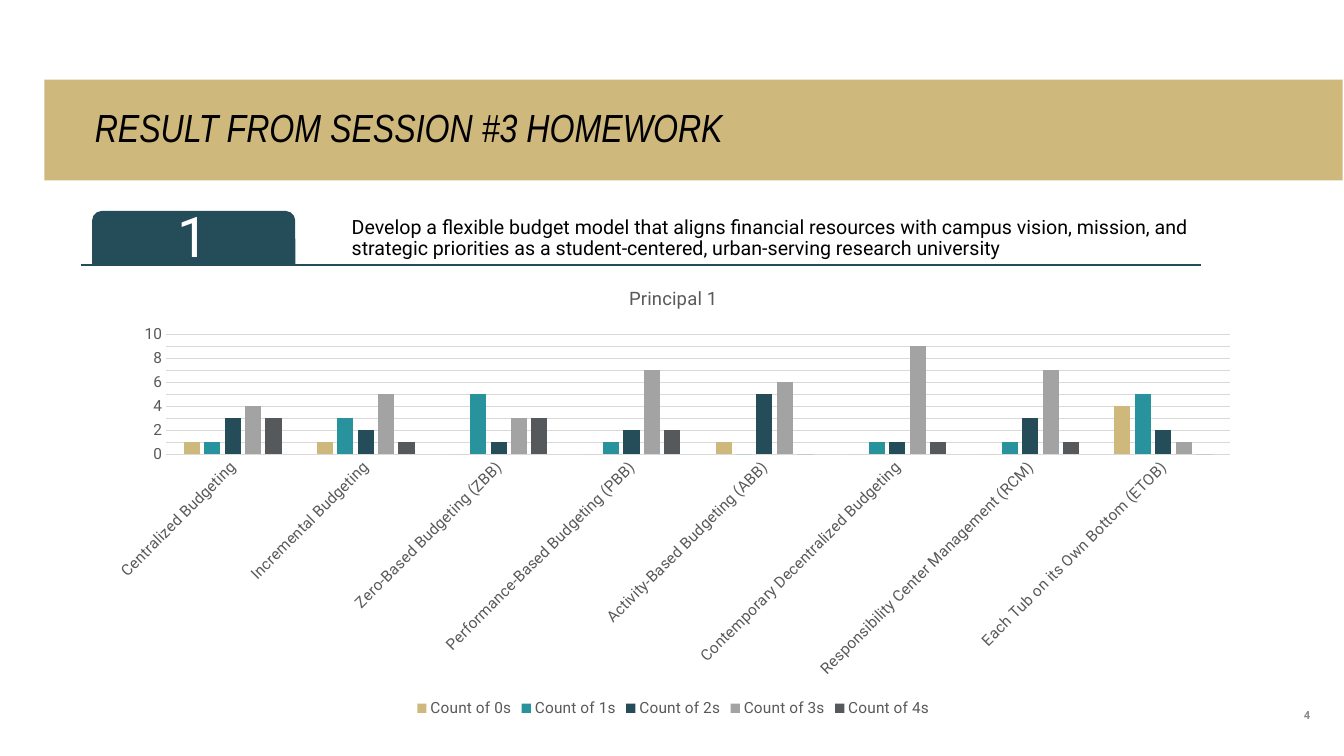
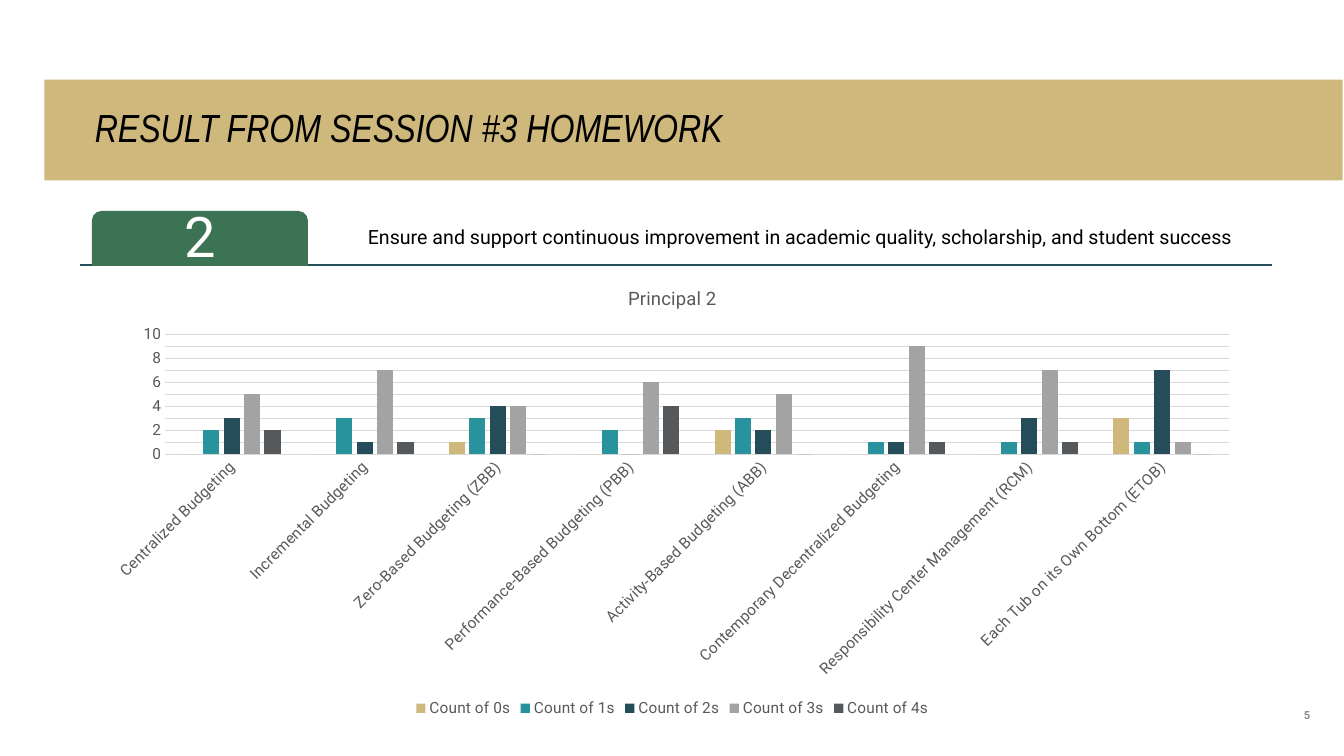
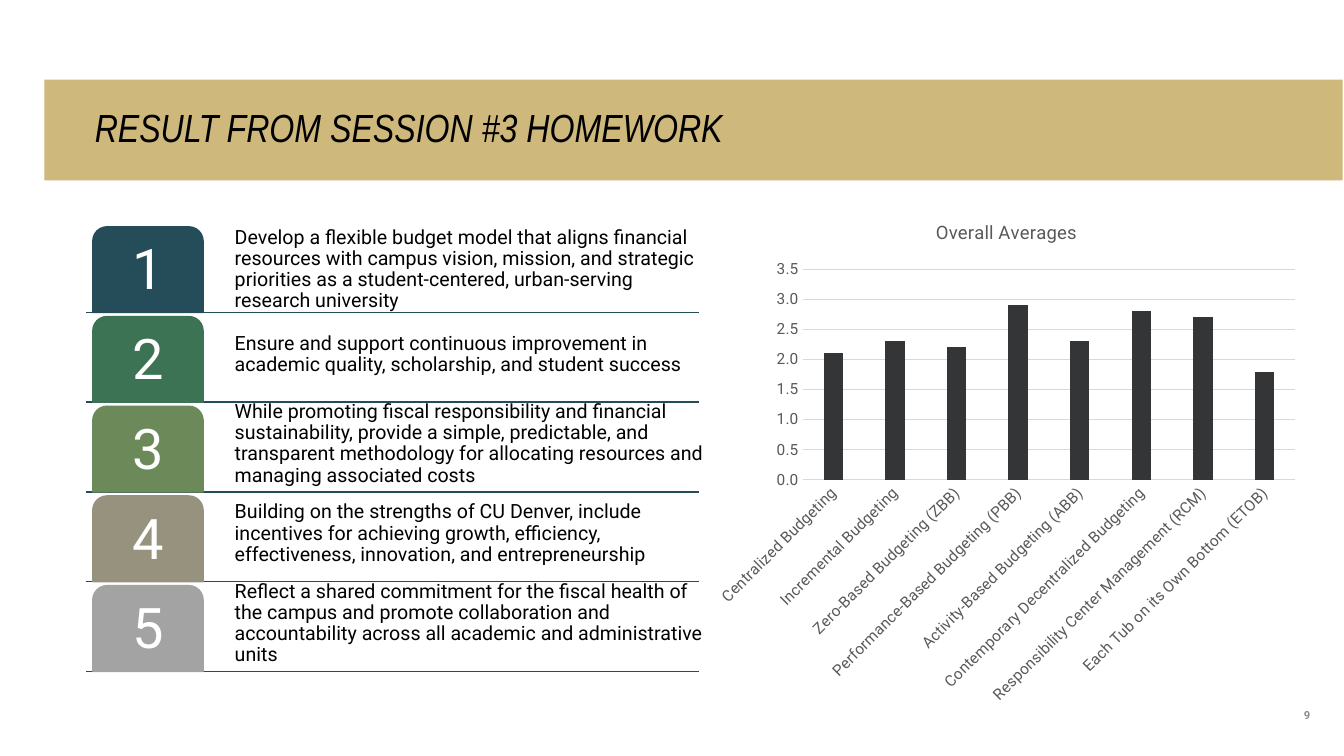
from lxml import etree
from pptx import Presentation
from pptx.chart.data import CategoryChartData
from pptx.dml.color import RGBColor
from pptx.enum.chart import XL_CHART_TYPE as ChartType, XL_LEGEND_POSITION as LegendPosition
from pptx.enum.chart import XL_TICK_MARK as TickMark
from pptx.enum.shapes import MSO_CONNECTOR as Connector, MSO_SHAPE as Shape
from pptx.enum.text import MSO_ANCHOR as Anchor, PP_ALIGN as Align
from pptx.oxml.ns import qn
from pptx.util import Pt

PX = 9144  # EMU per px, 100 px to the inch
HEADING_FONT, BODY_FONT = "Arial Narrow", "Roboto"
COLORS = {
    "gold": "CFB87C", "teal": "28939D", "navy": "244C59", "green": "3C7354",
    "olive": "6B8959", "stone": "96927D", "silver": "A3A3A3", "slate": "56595C",
    "charcoal": "343537", "black": "000000", "white": "FFFFFF",
    "chart_text": "595959", "grid": "D9D9D9", "page_number": "8C8C8C",
}

# Content
HEADING = "RESULT FROM SESSION #3 HOMEWORK"
PRINCIPLES = [
    ("navy", "Develop a flexible budget model that aligns financial resources with campus vision, "
             "mission, and strategic priorities as a student-centered, urban-serving research university"),
    ("green", "Ensure and support continuous improvement in academic quality, scholarship, "
              "and student success"),
    ("olive", "While promoting fiscal responsibility and financial sustainability, provide a simple, "
              "predictable, and transparent methodology for allocating resources and managing "
              "associated costs"),
    ("stone", "Building on the strengths of CU Denver, include incentives for achieving growth, "
              "efficiency, effectiveness, innovation, and entrepreneurship"),
    ("silver", "Reflect a shared commitment for the fiscal health of the campus and promote "
               "collaboration and accountability across all academic and administrative units"),
]
BUDGET_MODELS = [
    "Centralized Budgeting", "Incremental Budgeting", "Zero-Based Budgeting (ZBB)",
    "Performance-Based Budgeting (PBB)", "Activity-Based Budgeting (ABB)",
    "Contemporary Decentralized Budgeting", "Responsibility Center Management (RCM)",
    "Each Tub on its Own Bottom (ETOB)",
]
SCORE_COLORS = ["gold", "teal", "navy", "silver", "slate"]
SCORE_SLIDES = [
    {"page": 4, "principle": 1, "row": (80, 1112), "chart": (93, 266, 1150, 450),
     "counts": [(1, 1, 0, 0, 1, 0, 0, 4), (1, 3, 5, 1, 0, 1, 1, 5), (3, 2, 1, 2, 5, 1, 3, 2),
                (4, 5, 3, 7, 6, 9, 7, 1), (3, 1, 3, 2, 0, 1, 1, 0)]},
    {"page": 5, "principle": 2, "row": (79, 1183), "chart": (92, 266, 1150, 450),
     "counts": [(0, 0, 1, 0, 2, 0, 0, 3), (2, 3, 3, 2, 3, 1, 1, 1), (3, 1, 4, 0, 2, 1, 3, 7),
                (5, 7, 4, 6, 5, 9, 7, 1), (2, 1, 0, 4, 0, 1, 1, 0)]},
]
AVERAGES = (2.1, 2.3, 2.2, 2.9, 2.3, 2.8, 2.7, 1.8)


def px(*lengths):
    return [round(length * PX) for length in lengths]


def rgb(name):
    return RGBColor.from_string(COLORS[name])


def set_font(font, size, color, family=BODY_FONT, bold=False, italic=False):
    font.size, font.name, font.bold, font.italic = Pt(size), family, bold, italic
    font.color.rgb = rgb(color)


def set_text(frame, text, size, color, insets, anchor=Anchor.MIDDLE, align=Align.LEFT,
             spacing=0.9, **style):
    frame.text = text
    frame.word_wrap = True
    frame.vertical_anchor = anchor
    frame.margin_left, frame.margin_top, frame.margin_right, frame.margin_bottom = px(*insets)
    paragraph = frame.paragraphs[0]
    paragraph.alignment, paragraph.line_spacing = align, spacing
    set_font(paragraph.runs[0].font, size, color, **style)


def add_result_slide(deck, page):
    """Slide with the gold title band and the page number."""
    slide = deck.slides.add_slide(deck.slide_layouts[5])
    band = slide.shapes.title
    band.left, band.top, band.width, band.height = px(44, 79, 1288, 100)
    band.fill.solid()
    band.fill.fore_color.rgb = rgb("gold")
    set_text(band.text_frame, HEADING, 28, "black", (50, 5, 100, 5),
             family=HEADING_FONT, italic=True)
    page_number = slide.shapes.add_textbox(*px(1215, 666, 85, 50))
    set_text(page_number.text_frame, str(page), 8, "page_number", (0, 0, 0, 0),
             anchor=Anchor.BOTTOM, align=Align.RIGHT, spacing=1.0, bold=True)
    return slide


def add_principle(slide, number, left, width, top, height, text_lift):
    """Numbered tab and statement on a rule; columns are shares of the row width."""
    color, statement = PRINCIPLES[number - 1]
    bottom = top + height
    rule = slide.shapes.add_connector(Connector.STRAIGHT, *px(left, bottom, left + width, bottom))
    rule.line.color.rgb, rule.line.width = rgb("navy"), Pt(1)
    etree.SubElement(rule._element.spPr, qn("a:effectLst"))

    statement_box = slide.shapes.add_textbox(
        *px(left + 0.24 * width - 1, top - text_lift, 0.78 * width + 3, height))
    set_text(statement_box.text_frame, statement, 14, "black", (3, 3, 3, 3))

    tab = slide.shapes.add_shape(Shape.ROUND_2_SAME_RECTANGLE,
                                 *px(left + 0.01 * width + 1, top, 0.18 * width, height))
    tab.shadow.inherit = False
    tab.fill.solid()
    tab.fill.fore_color.rgb = tab.line.color.rgb = rgb(color)
    tab.line.width = Pt(1)
    set_text(tab.text_frame, str(number), 40, "white", (8, 8, 8, 8), align=Align.CENTER)


def add_columns(slide, box, title, series, gap, overlap, top_value, step,
                number_format="General", legend=False):
    """Clustered columns; series holds (name, values, color)."""
    data = CategoryChartData(number_format=number_format)
    data.categories = BUDGET_MODELS
    for name, values, _ in series:
        data.add_series(name, values)
    chart = slide.shapes.add_chart(ChartType.COLUMN_CLUSTERED, *px(*box), data).chart
    set_font(chart.font, 11, "chart_text")

    chart.has_title = True
    title_frame = chart.chart_title.text_frame
    title_frame.text = title
    set_font(title_frame.paragraphs[0].runs[0].font, 13.2, "chart_text")
    chart.has_legend = legend
    if legend:
        chart.legend.position = LegendPosition.BOTTOM
        chart.legend.include_in_layout = False
        set_font(chart.legend.font, 11, "chart_text")

    models, scores = chart.category_axis, chart.value_axis
    for axis in (models, scores):
        axis.major_tick_mark = axis.minor_tick_mark = TickMark.NONE
        set_font(axis.tick_labels.font, 11, "chart_text")
    models._element.find(qn("c:txPr")).find(qn("a:bodyPr")).set("rot", "-2700000")
    scores.minimum_scale, scores.maximum_scale, scores.major_unit = 0, top_value, step
    scores.tick_labels.number_format = number_format
    scores.tick_labels.number_format_is_linked = False
    scores.has_major_gridlines = True
    for line in (models.format.line, scores.major_gridlines.format.line):
        line.color.rgb, line.width = rgb("grid"), Pt(0.75)
    scores.format.line.fill.background()

    plot = chart.plots[0]
    plot.gap_width, plot.overlap, plot.vary_by_categories = gap, overlap, False
    for columns, (_, _, color) in zip(plot.series, series):
        columns.format.fill.solid()
        columns.format.fill.fore_color.rgb = rgb(color)


def main():
    deck = Presentation()
    deck.slide_width, deck.slide_height = px(1333.33, 750)

    # Score counts for a single principle
    for scores in SCORE_SLIDES:
        slide = add_result_slide(deck, scores["page"])
        add_principle(slide, scores["principle"], *scores["row"], top=210, height=53, text_lift=0)
        series = [(f"Count of {score}s", counts, color) for score, (counts, color)
                  in enumerate(zip(scores["counts"], SCORE_COLORS))]
        add_columns(slide, scores["chart"], f"Principal {scores['principle']}", series,
                    gap=219, overlap=-27, top_value=10, step=1, legend=True)

    # All principles beside the overall averages
    slide = add_result_slide(deck, 9)
    for index in range(len(PRINCIPLES)):
        add_principle(slide, index + 1, 85, 608, top=225 + 89 * index, height=85,
                      text_lift=5 if index else 0)
    add_columns(slide, (700, 199, 597, 510), "Overall Averages",
                [("Series 1", AVERAGES, "charcoal")],
                gap=220, overlap=-30, top_value=3.5, step=0.5, number_format="0.0")

    deck.save("out.pptx")


if __name__ == "__main__":
    main()
